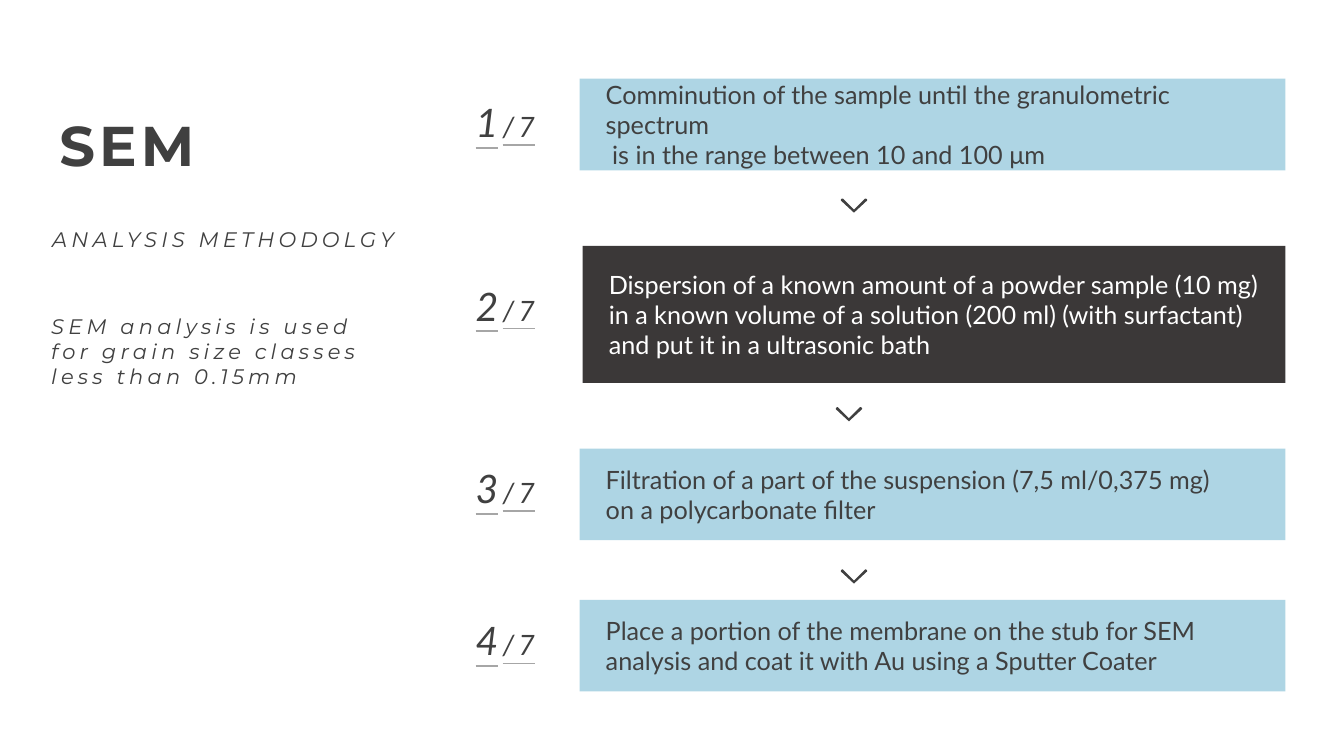
from dataclasses import dataclass

from lxml.etree import SubElement
from pptx import Presentation
from pptx.dml.color import RGBColor
from pptx.enum.shapes import MSO_SHAPE
from pptx.enum.text import MSO_ANCHOR, MSO_AUTO_SIZE, PP_ALIGN
from pptx.oxml.ns import qn
from pptx.util import Inches, Pt


@dataclass(frozen=True)
class Theme:
    ink: str = "404040"
    sky: str = "AED5E4"
    dark: str = "3B3838"
    white: str = "FFFFFF"
    rule: str = "A6A6A6"
    heading_font: str = "Montserrat"
    body_font: str = "Lato"
    title: int = 40
    subtitle: int = 15
    step: int = 18
    number: int = 28
    total: int = 20
    tracking: int = 3


class SlideBuilder:
    def __init__(self, s, theme):
        self.s = s
        self.theme = theme

    def style(self, r, font, size, color, bold=False, italic=False, tracking=0):
        r.font.name = font
        r.font.size = Pt(size)
        r.font.bold = bold
        r.font.italic = italic
        r.font.color.rgb = RGBColor.from_string(color)
        if tracking:
            r.font._element.set("spc", str(tracking * 100))

    def underline(self, r):
        r.font.underline = True
        rPr = r.font._element
        fill = SubElement(rPr, qn("a:uFill"))
        solid = SubElement(fill, qn("a:solidFill"))
        SubElement(solid, qn("a:srgbClr"), val=self.theme.rule)
        rPr.find(qn("a:latin")).addprevious(fill)

    def text_box(self, left, top, width, height):
        tf = self.s.shapes.add_textbox(
            Inches(left), Inches(top), Inches(width), Inches(height)
        ).text_frame
        tf.word_wrap = True
        tf.auto_size = MSO_AUTO_SIZE.SHAPE_TO_FIT_TEXT
        return tf

    def heading(self, text, left, top, width, height, size, bold=False, italic=False):
        t = self.theme
        tf = self.text_box(left, top, width, height)
        tf.text = text
        self.style(tf.paragraphs[0].runs[0], t.heading_font, size, t.ink,
                   bold, italic, t.tracking)

    def counter(self, number, total, top):
        t = self.theme
        p = self.text_box(4.62, top, 0.97, 0.57).paragraphs[0]
        for text, size in ((str(number), t.number), (f"/{total}", t.total)):
            r = p.add_run()
            r.text = text
            self.style(r, t.body_font, size, t.ink, italic=True, tracking=t.tracking)
            self.underline(r)

    def step_box(self, lines, left, top, height, fill, color, space_after):
        right = 12.75
        sp = self.s.shapes.add_shape(
            MSO_SHAPE.RECTANGLE,
            Inches(left), Inches(top), Inches(right - left), Inches(height))
        sp.shadow.inherit = False
        sp.fill.solid()
        sp.fill.fore_color.rgb = RGBColor.from_string(fill)
        sp.line.fill.background()
        tf = sp.text_frame
        tf.word_wrap = True
        tf.vertical_anchor = MSO_ANCHOR.MIDDLE
        tf.text = "\n".join(lines)
        for p in tf.paragraphs:
            p.alignment = PP_ALIGN.LEFT
            p._p.get_or_add_pPr().set("marL", str(Inches(0.16)))
            self.style(p.runs[0], self.theme.body_font, self.theme.step, color)
        p.space_after = Pt(space_after)

    def chevron(self, x, y):
        arm = [(0.11, -0.07), (0.12, -0.07), (0.13, -0.06), (0.13, -0.05)]
        outline = [(0, 0.04), *arm, (0, 0.07)]
        outline += [(-dx, dy) for dx, dy in reversed(arm)]
        points = [(Inches(x + dx), Inches(y + dy)) for dx, dy in outline]
        fb = self.s.shapes.build_freeform(*points[0])
        fb.add_line_segments(points[1:], close=True)
        sp = fb.convert_to_shape()
        sp.shadow.inherit = False
        sp.fill.solid()
        sp.fill.fore_color.rgb = RGBColor.from_string(self.theme.ink)
        sp.line.fill.background()


def main():
    prs = Presentation()
    prs.slide_width = Inches(13.33)
    prs.slide_height = Inches(7.5)
    t = Theme()
    slide = SlideBuilder(prs.slides.add_slide(prs.slide_layouts[6]), t)

    slide.heading("SEM", 0.49, 1.05, 12.75, 0.77, t.title, bold=True)
    slide.heading("ANALYSIS METHODOLGY", 0.42, 2.2, 7.33, 0.35,
                  t.subtitle, italic=True)
    slide.heading("SEM analysis is used for grain size classes less than 0.15mm",
                  0.41, 3.06, 3.59, 0.86, t.subtitle, italic=True)

    light, dark = (t.sky, t.ink), (t.dark, t.white)
    steps = [
        (["Comminution of the sample until the granulometric spectrum",
          " is in the range between 10 and 100 μm"],
         5.75, 0.78, 0.91, light, 4, 0.93),
        (["Dispersion of a known amount of a powder sample (10 mg) in a known "
          "volume of a solution (200 ml) (with surfactant) and put it in a "
          "ultrasonic bath"],
         5.78, 2.44, 1.36, dark, 0, 2.75),
        (["Filtration of a part of the suspension (7,5 ml/0,375 mg)",
          "on a polycarbonate filter"],
         5.75, 4.45, 0.91, light, 4, 4.56),
        (["Place a portion of the membrane on the stub for SEM analysis and "
          "coat it with Au using a Sputter Coater"],
         5.75, 5.95, 0.91, light, 0, 6.07),
    ]
    for number, step in enumerate(steps, 1):
        lines, left, top, height, colors, space_after, counter_top = step
        slide.step_box(lines, left, top, height, *colors, space_after)
        slide.counter(number, 7, counter_top)

    for x, y in ((8.47, 2.04), (8.42, 4.11), (8.47, 5.72)):
        slide.chevron(x, y)

    prs.save("out.pptx")


if __name__ == "__main__":
    main()
